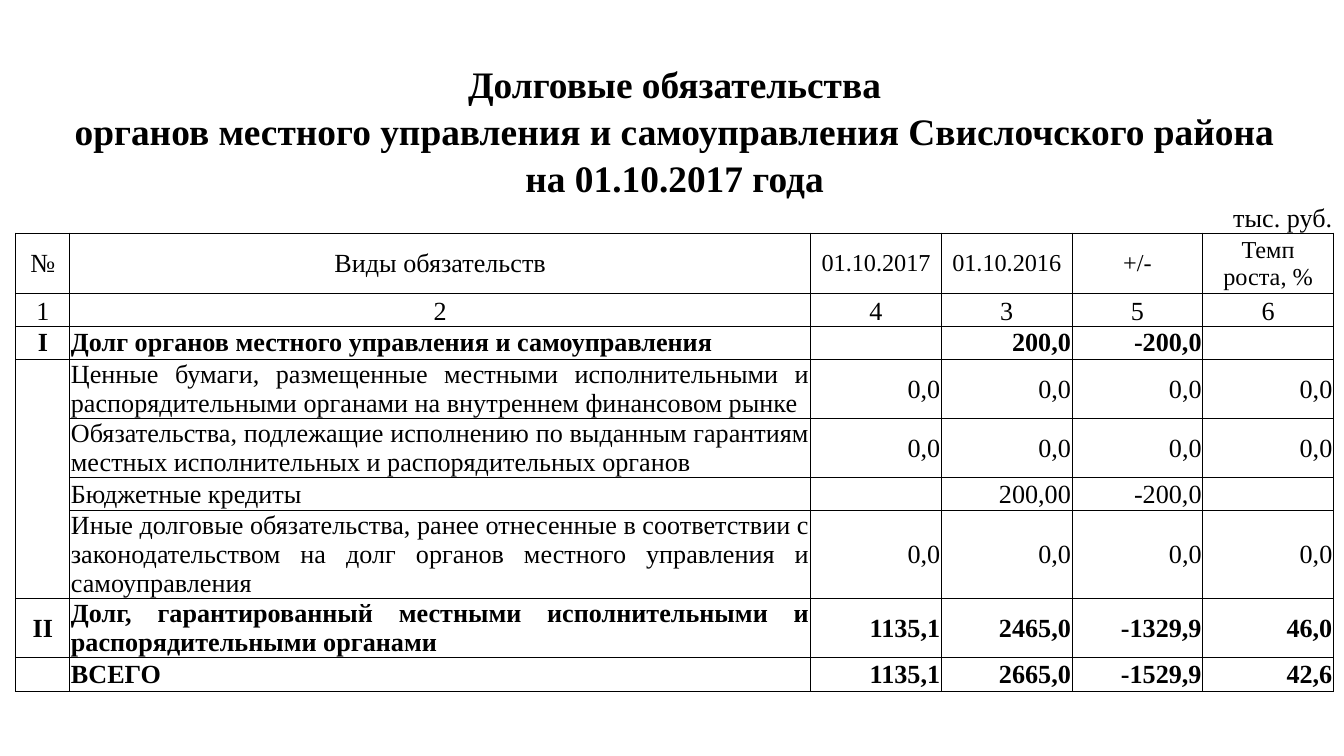
from lxml import etree
from pptx import Presentation
from pptx import util as u
from pptx.dml import color
from pptx.enum import text
from pptx.oxml import ns

COLORS = {"ink": "000000", "paper": "FFFFFF"}
FONT = "Times New Roman"
ALIGN = text.PP_ALIGN
ANCHOR = text.MSO_ANCHOR

TITLES = [
    "Долговые обязательства",
    "органов местного управления и самоуправления Свислочского района",
    "на 01.10.2017 года",
]
UNITS = "тыс. руб."
HEADERS = ["№", "Виды обязательств", "01.10.2017", "01.10.2016", "+/-", "Темп\nроста, %"]
NUMBERS = ["1", "2", "4", "3", "5", "6"]
ZEROS = ["0,0"] * 4
DEBTS = [
    ["I", "Долг органов местного управления и самоуправления", "", "200,0", "-200,0", ""],
    ["", "Ценные бумаги, размещенные местными исполнительными и распорядительными "
         "органами на внутреннем финансовом рынке", *ZEROS],
    ["", "Обязательства, подлежащие исполнению по выданным гарантиям местных "
         "исполнительных и распорядительных органов", *ZEROS],
    ["", "Бюджетные кредиты", "", "200,00", "-200,0", ""],
    ["", "Иные долговые обязательства, ранее отнесенные в соответствии с законодательством "
         "на долг органов местного управления и самоуправления", *ZEROS],
    ["II", "Долг, гарантированный местными исполнительными и распорядительными органами",
     "1135,1", "2465,0", "-1329,9", "46,0"],
    ["", "ВСЕГО", "1135,1", "2665,0", "-1529,9", "42,6"],
]
COL_WIDTHS = [1.02, 14] + [2.47] * 4
ROW_HEIGHTS = [0.88] * 3 + [0.62, 1.14, 0.62, 0.55, 1.12, 1.12, 0.62, 1.64, 1.12, 0.63]
UNITS_ROW = len(TITLES)
HEADER_ROW = UNITS_ROW + 1
NUMBER_ROW = HEADER_ROW + 1
DEBT_ROW = NUMBER_ROW + 1
DETAIL_ROWS = range(DEBT_ROW + 1, DEBT_ROW + 5)
BOLD_ROWS = (DEBT_ROW, DEBT_ROW + 5, DEBT_ROW + 6)


def write(cell, content, size=14, bold=False, align=ALIGN.CENTER, anchor=ANCHOR.MIDDLE):
    cell.margin_left = cell.margin_right = cell.margin_top = u.Cm(0.02)
    cell.margin_bottom = u.Cm(0)
    cell.vertical_anchor = anchor
    tf = cell.text_frame
    for i, line in enumerate(content.split("\n")):
        p = tf.paragraphs[0] if i == 0 else tf.add_paragraph()
        p.alignment = align
        if not line:
            p._p.get_or_add_endParaRPr().set("sz", str(size * 100))
            continue
        r = p.add_run()
        r.text = line
        r.font.name = FONT
        r.font.size = u.Pt(size)
        r.font.bold = bold
        r.font.color.rgb = color.RGBColor.from_string(COLORS["ink"])


def set_borders(cell, sides):
    tc_pr = cell._tc.get_or_add_tcPr()
    for side in "LRTB":
        ln = etree.SubElement(tc_pr, ns.qn(f"a:ln{side}"), w=str(u.Pt(0.5)))
        if side in sides:
            fill = etree.SubElement(ln, ns.qn("a:solidFill"))
            etree.SubElement(fill, ns.qn("a:srgbClr"), val=COLORS["ink"])
        else:
            etree.SubElement(ln, ns.qn("a:noFill"))


def border_sides(row, col):
    if row < UNITS_ROW:
        return ""
    if row == UNITS_ROW:
        return "B"
    if col == 0 and row in DETAIL_ROWS:
        top = "T" if row == DETAIL_ROWS[0] else ""
        bottom = "B" if row == DETAIL_ROWS[-1] else ""
        return "LR" + top + bottom
    return "LRTB"


def format_grid(table):
    for row in range(len(ROW_HEIGHTS)):
        for col in range(len(COL_WIDTHS)):
            cell = table.cell(row, col)
            set_borders(cell, border_sides(row, col))
            if row == UNITS_ROW - 1 or (row >= DEBT_ROW and col > 1):
                cell.fill.solid()
                cell.fill.fore_color.rgb = color.RGBColor.from_string(COLORS["paper"])
            else:
                cell.fill.background()


def write_heading(table):
    for row, content in enumerate(TITLES + [UNITS]):
        cell = table.cell(row, 0)
        cell.merge(table.cell(row, len(COL_WIDTHS) - 1))
        if row == UNITS_ROW:
            write(cell, content, align=ALIGN.RIGHT, anchor=ANCHOR.BOTTOM)
        else:
            write(cell, content, size=20, bold=True, anchor=ANCHOR.BOTTOM)


def write_body(table):
    for col, (header, number) in enumerate(zip(HEADERS, NUMBERS)):
        write(table.cell(HEADER_ROW, col), header, size=14 if col < 2 else 13)
        write(table.cell(NUMBER_ROW, col), number, anchor=ANCHOR.BOTTOM)
    aligns = [ALIGN.CENTER, ALIGN.JUSTIFY] + [ALIGN.RIGHT] * 4
    for row, values in enumerate(DEBTS, DEBT_ROW):
        for col, (value, align) in enumerate(zip(values, aligns)):
            write(table.cell(row, col), value, bold=row in BOLD_ROWS, align=align)
    table.cell(DETAIL_ROWS[1], 1).vertical_anchor = ANCHOR.TOP
    table.cell(len(ROW_HEIGHTS) - 1, 1).text_frame.paragraphs[0].alignment = ALIGN.LEFT


def add_debt_table(s):
    sp = s.shapes.add_table(
        len(ROW_HEIGHTS), len(COL_WIDTHS), u.Cm(0.3), u.Cm(1.14),
        u.Cm(sum(COL_WIDTHS)), u.Cm(sum(ROW_HEIGHTS)))
    table = sp.table
    table.first_row = table.horz_banding = False
    for column, width in zip(table.columns, COL_WIDTHS):
        column.width = u.Cm(width)
    for row, height in zip(table.rows, ROW_HEIGHTS):
        row.height = u.Cm(height)
    format_grid(table)
    write_heading(table)
    write_body(table)


def main():
    prs = Presentation()
    prs.slide_width, prs.slide_height = u.Cm(25.4), u.Cm(14.28)
    s = prs.slides.add_slide(prs.slide_layouts[6])
    add_debt_table(s)
    prs.save("out.pptx")


if __name__ == "__main__":
    main()
